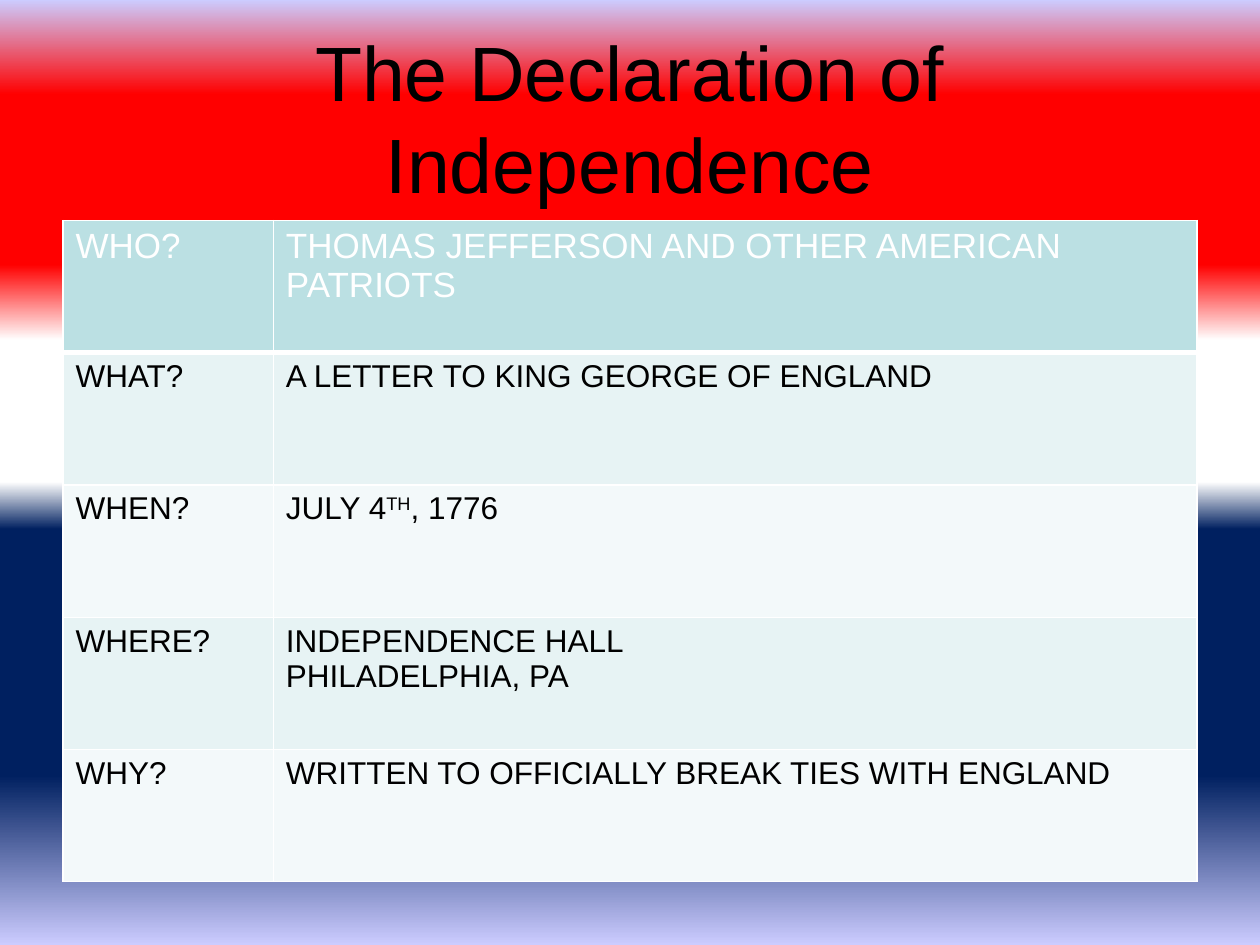
from lxml.etree import SubElement
from pptx import Presentation
from pptx.dml.color import RGBColor
from pptx.enum.text import MSO_ANCHOR, PP_ALIGN
from pptx.oxml.ns import qn
from pptx.util import Pt

TITLE = "The Declaration of Independence"
# Each answer is a list of lines; a line is a list of (text, superscript) spans.
ROWS = [
    ("WHO?", [[("THOMAS JEFFERSON AND OTHER AMERICAN PATRIOTS", False)]]),
    ("WHAT?", [[("A LETTER TO KING GEORGE OF ENGLAND", False)]]),
    ("WHEN?", [[("JULY 4", False), ("TH", True), (", 1776", False)]]),
    ("WHERE?", [[("INDEPENDENCE HALL", False)], [("PHILADELPHIA, PA", False)]]),
    ("WHY?", [[("WRITTEN TO OFFICIALLY BREAK TIES WITH ENGLAND", False)]]),
]
COLORS = {
    "lilac": "CCCCFF", "red": "FF0000", "white": "FFFFFF", "navy": "002060",
    "black": "000000", "header": "BBE0E3", "odd": "E7F3F4", "even": "F3F9FA",
}
BACKGROUND = [
    (0, "lilac"), (10, "red"), (18, "red"), (28, "red"), (36, "white"),
    (51, "white"), (56, "navy"), (61, "navy"), (82, "navy"), (100, "lilac"),
]
FONT = "Arial"
LEFT, WIDTH = 36, 648
TABLE_TOP, ROW_HEIGHT = 126, 75.6
COLUMN_WIDTHS = (120.24, 527.76)


def style(font, size, color):
    font.name, font.size, font.bold = FONT, Pt(size), False
    font.color.rgb = RGBColor.from_string(COLORS[color])


def paint_background(page):
    fill = page.background.fill
    fill.gradient()
    fill.gradient_angle = 270
    stops = page.element.find(".//" + qn("a:gsLst"))
    for stop in list(stops):
        stops.remove(stop)
    for percent, color in BACKGROUND:
        stop = SubElement(stops, qn("a:gs"), pos=str(percent * 1000))
        SubElement(stop, qn("a:srgbClr"), val=COLORS[color])


def add_title(page):
    box = page.shapes.add_textbox(Pt(LEFT), Pt(21.6), Pt(WIDTH), Pt(90))
    frame = box.text_frame
    frame.word_wrap = True
    frame.vertical_anchor = MSO_ANCHOR.MIDDLE
    frame.text = TITLE
    para = frame.paragraphs[0]
    para.alignment = PP_ALIGN.CENTER
    style(para.runs[0].font, 44, "black")


def add_borders(cell, bottom_width):
    properties = cell._tc.get_or_add_tcPr()
    for side, width in (("L", 1), ("R", 1), ("T", 1), ("B", bottom_width)):
        line = SubElement(properties, qn("a:ln" + side), w=str(Pt(width)))
        solid = SubElement(line, qn("a:solidFill"))
        SubElement(solid, qn("a:srgbClr"), val=COLORS["white"])


def fill_cell(cell, lines, is_header, fill_color):
    add_borders(cell, 3 if is_header else 1)
    cell.fill.solid()
    cell.fill.fore_color.rgb = RGBColor.from_string(COLORS[fill_color])
    size, color = (20, "white") if is_header else (18, "black")
    frame = cell.text_frame
    for index, line in enumerate(lines):
        para = frame.add_paragraph() if index else frame.paragraphs[0]
        for text, superscript in line:
            span = para.add_run()
            span.text = text
            style(span.font, size, color)
            if superscript:
                span.font._element.set("baseline", "30000")


def add_facts(page):
    table = page.shapes.add_table(
        len(ROWS), len(COLUMN_WIDTHS), Pt(LEFT), Pt(TABLE_TOP),
        Pt(WIDTH), Pt(ROW_HEIGHT * len(ROWS))).table
    for column, width in zip(table.columns, COLUMN_WIDTHS):
        column.width = Pt(width)
    for index, (question, answer) in enumerate(ROWS):
        table.rows[index].height = Pt(ROW_HEIGHT)
        fill_color = "header" if index == 0 else "odd" if index % 2 else "even"
        for column, lines in enumerate(([[(question, False)]], answer)):
            fill_cell(table.cell(index, column), lines, index == 0, fill_color)


def main():
    deck = Presentation()
    deck.slide_width, deck.slide_height = Pt(720), Pt(540)
    page = deck.slides.add_slide(deck.slide_layouts[6])
    paint_background(page)
    add_title(page)
    add_facts(page)
    deck.save("out.pptx")


if __name__ == "__main__":
    main()
